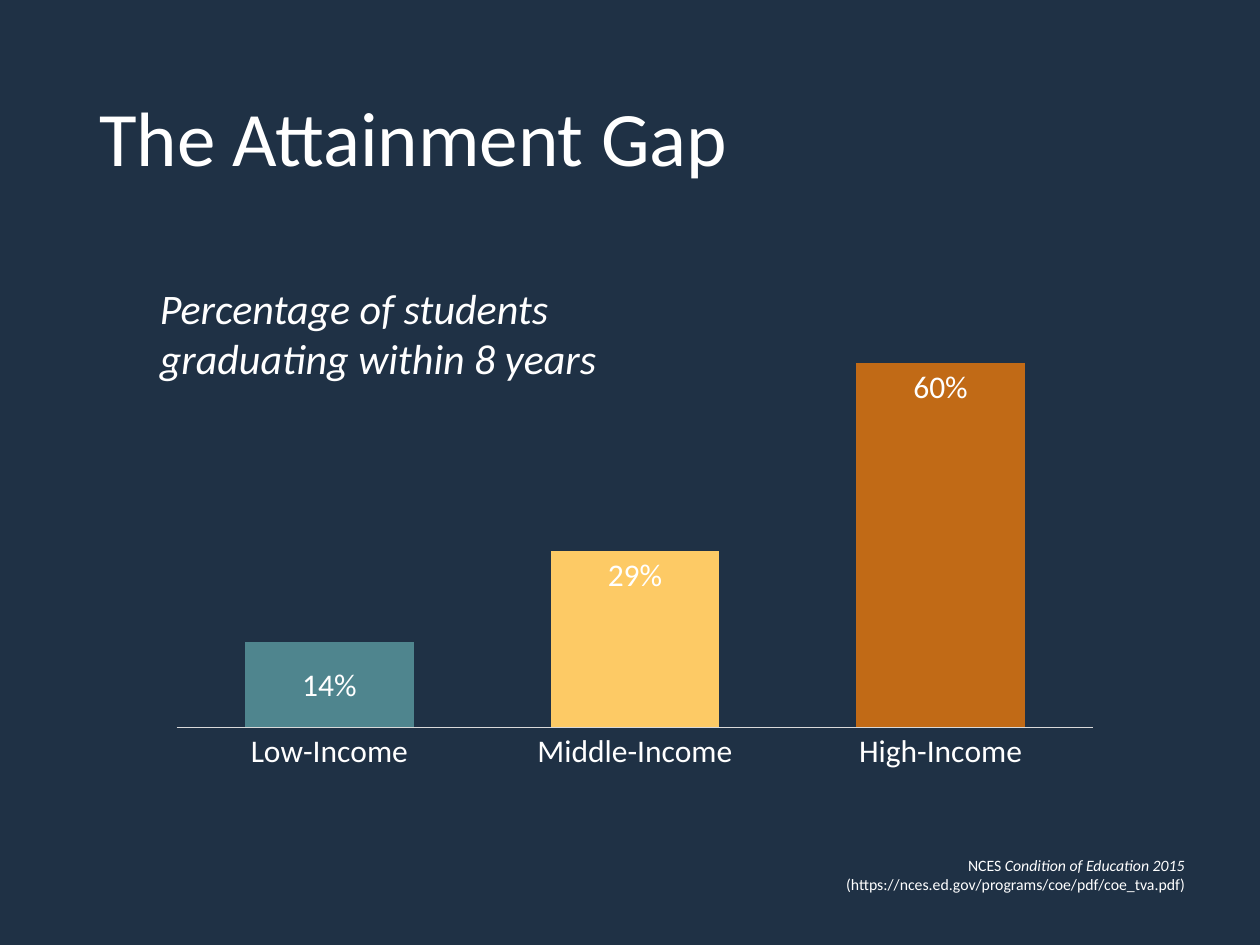
import pptx
import pptx.util
import pptx.dml.color
import pptx.chart.data
import pptx.enum.chart
import pptx.enum.text
import pptx.oxml
import pptx.oxml.ns

Inches = pptx.util.Inches
Pt = pptx.util.Pt
ANCHOR = pptx.enum.text.MSO_ANCHOR
ALIGN = pptx.enum.text.PP_ALIGN
SPOT = pptx.enum.chart.XL_LABEL_POSITION

HUES = {
    "back": "1F3145",
    "text": "FFFFFF",
    "axis": "D9D9D9",
    "low": "4F858E",
    "middle": "FDCA65",
    "high": "C16A16",
}

BARS = [
    ("Low-Income", 0.14, "low", SPOT.CENTER),
    ("Middle-Income", 0.29, "middle", SPOT.INSIDE_END),
    ("High-Income", 0.6, "high", SPOT.INSIDE_END),
]

PLOT = {"x": 0.02, "y": 0.054, "w": 0.96, "h": 0.827}


def color(name):
    return pptx.dml.color.RGBColor.from_string(HUES[name])


def style(font, size, italic=False):
    font.name = "Calibri"
    font.size = Pt(size)
    font.italic = italic
    font.color.rgb = color("text")


def add_text(slide, box, runs, size, anchor=ANCHOR.TOP, align=ALIGN.LEFT, space=1.0):
    frame = slide.shapes.add_textbox(*map(Inches, box)).text_frame
    frame.word_wrap = True
    frame.vertical_anchor = anchor
    para = frame.paragraphs[0]
    para.alignment = align
    para.line_spacing = space
    for words, italic in runs:
        run = para.add_run()
        run.text = words
        style(run.font, size, italic)


def place_plot(chart):
    area = chart._chartSpace.chart.plotArea
    for old in area.findall(pptx.oxml.ns.qn("c:layout")):
        area.remove(old)
    parts = "".join(f'<c:{key} val="{val}"/>' for key, val in PLOT.items())
    area.insert(0, pptx.oxml.parse_xml(
        f'<c:layout {pptx.oxml.ns.nsdecls("c")}><c:manualLayout>'
        '<c:layoutTarget val="inner"/><c:xMode val="edge"/><c:yMode val="edge"/>'
        f'{parts}</c:manualLayout></c:layout>'))


def add_bars(slide, box):
    data = pptx.chart.data.CategoryChartData(number_format="0%")
    data.categories = [bar[0] for bar in BARS]
    data.add_series("Series 1", [bar[1] for bar in BARS])
    kind = pptx.enum.chart.XL_CHART_TYPE.COLUMN_CLUSTERED
    chart = slide.shapes.add_chart(kind, *map(Inches, box), data).chart
    chart.has_legend = False
    chart.has_title = False
    style(chart.font, 18)
    place_plot(chart)

    base = chart.category_axis
    base.major_tick_mark = pptx.enum.chart.XL_TICK_MARK.NONE
    base.format.line.color.rgb = color("axis")
    base.format.line.width = Pt(0.75)
    style(base.tick_labels.font, 18)
    scale = chart.value_axis
    scale.visible = False
    scale.has_major_gridlines = False
    scale.minimum_scale = 0
    scale.maximum_scale = 0.7

    plot = chart.plots[0]
    plot.gap_width = 81
    plot.overlap = -77
    plot.vary_by_categories = False
    series = plot.series[0]
    labels = series.data_labels
    labels.show_value = True
    labels.number_format = "0%"
    labels.number_format_is_linked = False
    style(labels.font, 18)
    for i, (_, _, hue, spot) in enumerate(BARS):
        point = series.points[i]
        point.format.fill.solid()
        point.format.fill.fore_color.rgb = color(hue)
        style(point.data_label.font, 18)
        point.data_label.position = spot


def main():
    deck = pptx.Presentation()
    deck.slide_width = Inches(10)
    deck.slide_height = Inches(7.5)
    slide = deck.slides.add_slide(deck.slide_layouts[6])
    slide.background.fill.solid()
    slide.background.fill.fore_color.rgb = color("back")

    add_text(slide, (0.69, 0.4, 8.62, 1.45), [("The Attainment Gap", False)],
             44, ANCHOR.MIDDLE, space=0.9)
    add_bars(slide, (1.25, 2.18, 7.58, 4.08))
    add_text(slide, (1.17, 2.19, 4.75, 0.91),
             [("Percentage of students graduating within 8 years", True)], 24)
    add_text(slide, (6, 6.45, 3.5, 0.98),
             [("NCES ", False), ("Condition of Education 2015 ", True),
              ("(https://nces.ed.gov/programs/coe/pdf/coe_tva.pdf)", False)],
             9, ANCHOR.MIDDLE, ALIGN.RIGHT)
    deck.save("out.pptx")


if __name__ == "__main__":
    main()
